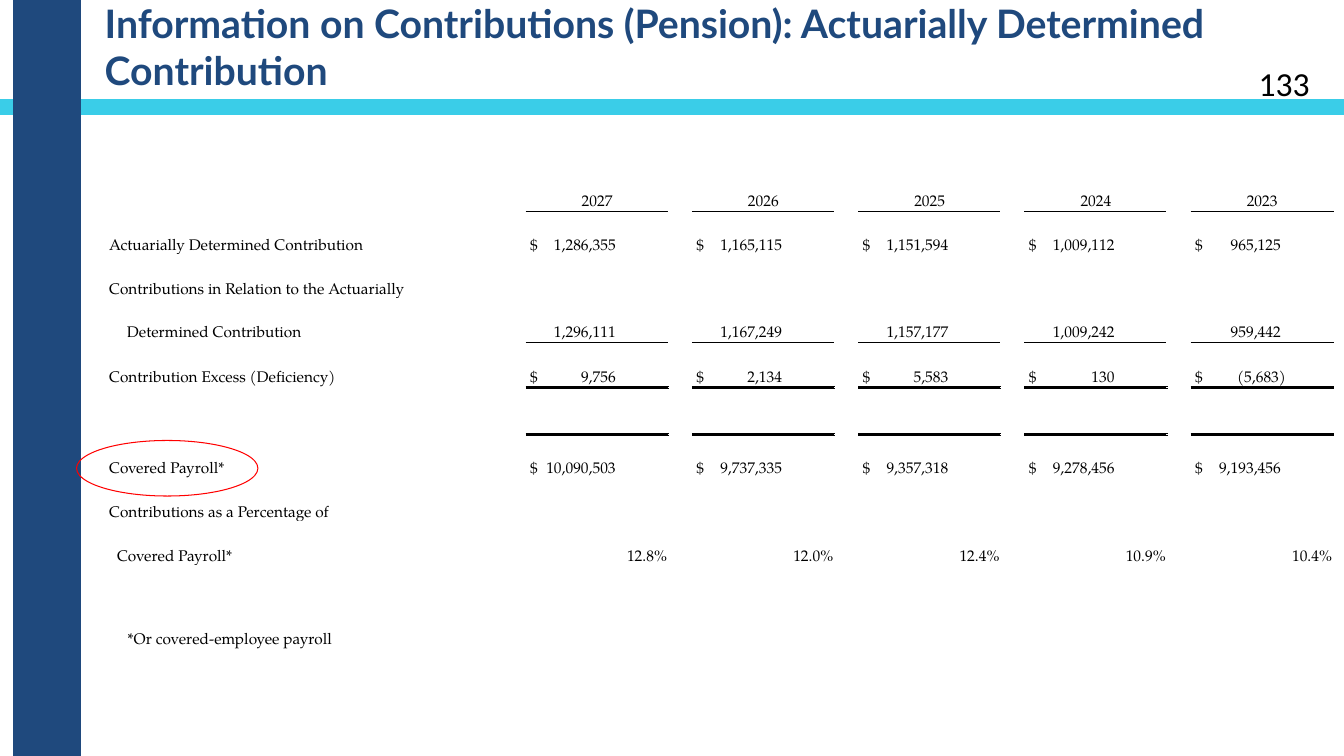
from lxml import etree
from pptx import Presentation
from pptx.dml.color import RGBColor
from pptx.enum.shapes import MSO_SHAPE
from pptx.enum.text import MSO_ANCHOR, PP_ALIGN
from pptx.oxml.ns import qn
from pptx.util import Cm, Pt

RECT, OVAL = MSO_SHAPE.RECTANGLE, MSO_SHAPE.OVAL
MIDDLE, BOTTOM, TOP = MSO_ANCHOR.MIDDLE, MSO_ANCHOR.BOTTOM, MSO_ANCHOR.TOP
LEFT, CENTER, RIGHT = PP_ALIGN.LEFT, PP_ALIGN.CENTER, PP_ALIGN.RIGHT

HUES = {"navy": "1F497D", "cyan": "3ACDE8", "ink": "000000", "red": "FF0000"}
SERIF = "TeX Gyre Pagella"
TITLE = "Information on Contributions (Pension): Actuarially Determined Contribution"
NOTE = "*Or covered-employee payroll"
PAGE = "133"

# label, label inset, kind, values
ROWS = [
    ("", 0.03, "year", ["2027", "2026", "2025", "2024", "2023"]),
    ("Actuarially Determined Contribution", 0.03, "money",
     ["1,286,355", "1,165,115", "1,151,594", "1,009,112", "965,125"]),
    ("Contributions in Relation to the Actuarially", 0.03, "", []),
    ("Determined Contribution", 0.48, "plain",
     ["1,296,111", "1,167,249", "1,157,177", "1,009,242", "959,442"]),
    ("Contribution Excess (Deficiency)", 0.03, "money",
     ["9,756", "2,134", "5,583", "130", "(5,683)"]),
    ("", 0.03, "", []),
    ("Covered Payroll*", 0.03, "money",
     ["10,090,503", "9,737,335", "9,357,318", "9,278,456", "9,193,456"]),
    ("Contributions as a Percentage of", 0.03, "", []),
    ("Covered Payroll*", 0.23, "rate", ["12.8%", "12.0%", "12.4%", "10.9%", "10.4%"]),
    ("", 0.03, "", []),
]
RULES = {0: 0.5, 3: 0.5, 4: 2}
TALL = {4: 1.14, 5: 1.19}
SIGNS = {"money": "$\t", "plain": "\t"}
ALIGNS = {"year": CENTER, "rate": RIGHT}


def add_run(para, text, size, face, hue, bold=False):
    run = para.add_run()
    run.text = text
    font = run.font
    font.size, font.name, font.bold = Pt(size), face, bold
    font.color.rgb = RGBColor.from_string(HUES[hue])


def add_text(slide, spot, anchor, *style):
    frame = slide.shapes.add_textbox(*map(Cm, spot)).text_frame
    frame.word_wrap = True
    frame.vertical_anchor = anchor
    add_run(frame.paragraphs[0], *style)


def add_form(slide, kind, spot, line, width, fill=None):
    form = slide.shapes.add_shape(kind, *map(Cm, spot))
    form.shadow.inherit = False
    if fill:
        form.fill.solid()
        form.fill.fore_color.rgb = RGBColor.from_string(HUES[fill])
    else:
        form.fill.background()
    form.line.color.rgb = RGBColor.from_string(HUES[line])
    form.line.width = Pt(width)


def add_rule(cell, side, width):
    props = cell._tc.get_or_add_tcPr()
    line = etree.SubElement(props, qn("a:" + side), w=str(Pt(width)))
    fill = etree.SubElement(line, qn("a:solidFill"))
    etree.SubElement(fill, qn("a:srgbClr"), val=HUES["ink"])


def add_stop(para, place):
    stops = etree.SubElement(para._p.get_or_add_pPr(), qn("a:tabLst"))
    etree.SubElement(stops, qn("a:tab"), pos=str(Cm(place)), algn="r")


def set_cell(cell, text, inset, align=LEFT):
    cell.margin_left, cell.margin_right = Cm(inset), Cm(0.03)
    cell.margin_top, cell.margin_bottom = Cm(0.03), 0
    cell.vertical_anchor = BOTTOM
    cell.fill.background()
    para = cell.text_frame.paragraphs[0]
    para.alignment = align
    if text:
        add_run(para, text, 11, SERIF, "ink")
    return para


def add_grid(slide):
    widths = [10.54] + [3.58, 0.51] * 4 + [3.58]
    heights = [TALL.get(row, 1.1) for row in range(len(ROWS))]
    grid = slide.shapes.add_table(len(heights), len(widths), Cm(2.72), Cm(4.22),
                                  Cm(sum(widths)), Cm(sum(heights))).table
    grid.first_row = grid.horz_banding = False
    for col, width in zip(grid.columns, widths):
        col.width = Cm(width)
    for row, height in zip(grid.rows, heights):
        row.height = Cm(height)
    for row, (label, inset, kind, values) in enumerate(ROWS):
        for col in range(len(widths)):
            cell = grid.cell(row, col)
            if col % 2 == 0:
                set_cell(cell, "" if col else label, inset)
                continue
            for side, rule in (("lnT", row - 1), ("lnB", row)):
                if rule in RULES:
                    add_rule(cell, side, RULES[rule])
            value = values[col // 2] if values else ""
            sign = SIGNS.get(kind, "")
            para = set_cell(cell, sign + value, 0.1 if sign else 0.03,
                            ALIGNS.get(kind, LEFT))
            if sign:
                add_stop(para, 2.29 if value.endswith(")") else 2.16)


def main():
    deck = Presentation()
    deck.slide_width, deck.slide_height = Cm(33.87), Cm(19.05)
    slide = deck.slides.add_slide(deck.slide_layouts[6])
    add_form(slide, RECT, (0, 2.54, 33.87, 0.33), "cyan", 2, "cyan")
    add_form(slide, RECT, (0.36, 0, 1.65, 19.05), "navy", 2, "navy")
    add_text(slide, (2.39, 0, 31.12, 2.34), MIDDLE, TITLE, 28, "Lato", "navy", True)
    add_grid(slide)
    add_text(slide, (2.97, 15.72, 11.48, 0.74), TOP, NOTE, 11, SERIF, "ink")
    add_form(slide, OVAL, (1.93, 11.1, 4.57, 1.4), "red", 0.75)
    add_text(slide, (31.47, 1.47, 2.03, 1.27), TOP, PAGE, 24, "Calibri", "ink")
    deck.save("out.pptx")


if __name__ == "__main__":
    main()
